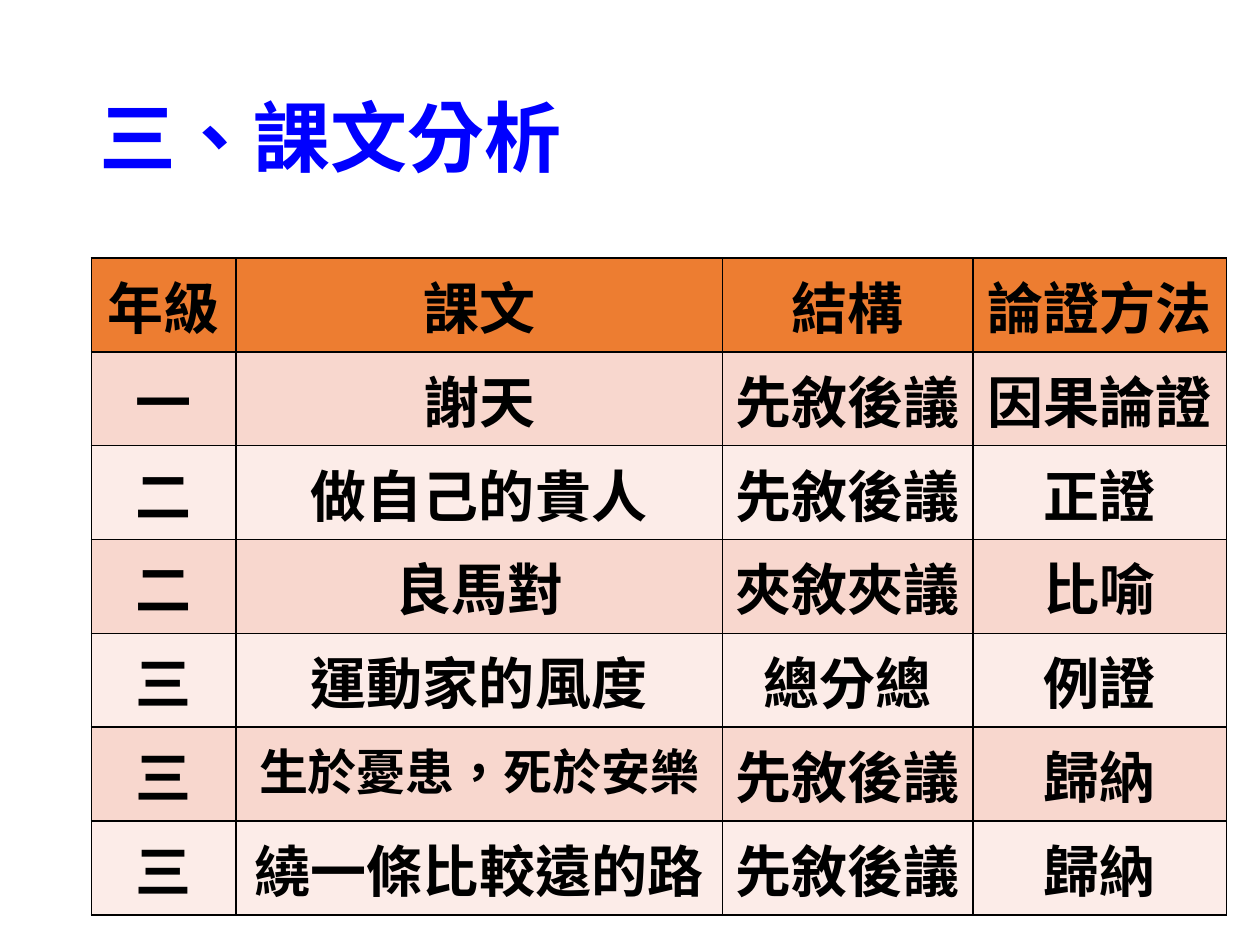
import pptx
import pptx.dml.color
import pptx.enum.lang
import pptx.enum.text
import pptx.oxml
import pptx.oxml.ns
import pptx.util

Cm = pptx.util.Cm
FONT = "Noto Sans CJK SC"
HEADER_FILL = "ED7D31"
BAND_FILLS = ("F8D7CE", "FCECE8")
COLUMN_WIDTHS = (2.92, 9.8, 5.06, 5.11)
LESSONS = (
    ("年級", "課文", "結構", "論證方法"),
    ("一", "謝天", "先敘後議", "因果論證"),
    ("二", "做自己的貴人", "先敘後議", "正證"),
    ("二", "良馬對", "夾敘夾議", "比喻"),
    ("三", "運動家的風度", "總分總", "例證"),
    ("三", "生於憂患，死於安樂", "先敘後議", "歸納"),
    ("三", "繞一條比較遠的路", "先敘後議", "歸納"),
)
SMALLER_TEXT = {"生於憂患，死於安樂": 28}


def color(hex_value):
    return pptx.dml.color.RGBColor.from_string(hex_value)


class LessonSlide:
    """Holds the style and the current slide, and adds its elements."""

    def __init__(self, deck, font):
        self.font = font
        self.slide = deck.slides.add_slide(deck.slide_layouts[6])

    def add_run(self, paragraph, text, size, hex_value):
        run = paragraph.add_run()
        run.text = text
        run.font.size = pptx.util.Pt(size)
        run.font.bold = True
        run.font.language_id = pptx.enum.lang.MSO_LANGUAGE_ID.TRADITIONAL_CHINESE
        run.font.color.rgb = color(hex_value)
        run.font.name = self.font
        east_asian = pptx.oxml.parse_xml(
            f'<a:ea {pptx.oxml.ns.nsdecls("a")} typeface="{self.font}"/>')
        run.font._element.append(east_asian)

    def add_title(self, text, left, top, width, height):
        title = self.slide.shapes.add_textbox(Cm(left), Cm(top), Cm(width), Cm(height))
        frame = title.text_frame
        frame.word_wrap = True
        frame.vertical_anchor = pptx.enum.text.MSO_ANCHOR.MIDDLE
        heading = frame.paragraphs[0]
        heading.line_spacing = 0.9
        self.add_run(heading, text, 44, "0000FF")

    def add_borders(self, cell):
        properties = cell._tc.get_or_add_tcPr()
        for position, side in enumerate(("lnL", "lnR", "lnT", "lnB")):
            border = pptx.oxml.parse_xml(
                f'<a:{side} {pptx.oxml.ns.nsdecls("a")} w="12700"><a:solidFill>'
                f'<a:srgbClr val="000000"/></a:solidFill></a:{side}>')
            properties.insert(position, border)

    def add_table(self, rows, left, top, widths, height):
        lessons = self.slide.shapes.add_table(
            len(rows), len(widths), Cm(left), Cm(top), Cm(sum(widths)), Cm(height)).table
        for column, width in zip(lessons.columns, widths):
            column.width = Cm(width)
        for row_number, row in enumerate(rows):
            fill = BAND_FILLS[(row_number - 1) % 2] if row_number else HEADER_FILL
            for column_number, text in enumerate(row):
                cell = lessons.cell(row_number, column_number)
                cell.fill.solid()
                cell.fill.fore_color.rgb = color(fill)
                self.add_borders(cell)
                entry = cell.text_frame.paragraphs[0]
                entry.alignment = pptx.enum.text.PP_ALIGN.CENTER
                self.add_run(entry, text, SMALLER_TEXT.get(text, 32), "000000")


def main():
    deck = pptx.Presentation()
    deck.slide_width, deck.slide_height = Cm(25.4), Cm(19.05)
    analysis = LessonSlide(deck, FONT)
    analysis.add_title("三、課文分析", 1.75, 1.02, 21.9, 3.68)
    analysis.add_table(LESSONS, 1.84, 5.2, COLUMN_WIDTHS, 13.25)
    deck.save("out.pptx")


if __name__ == "__main__":
    main()
